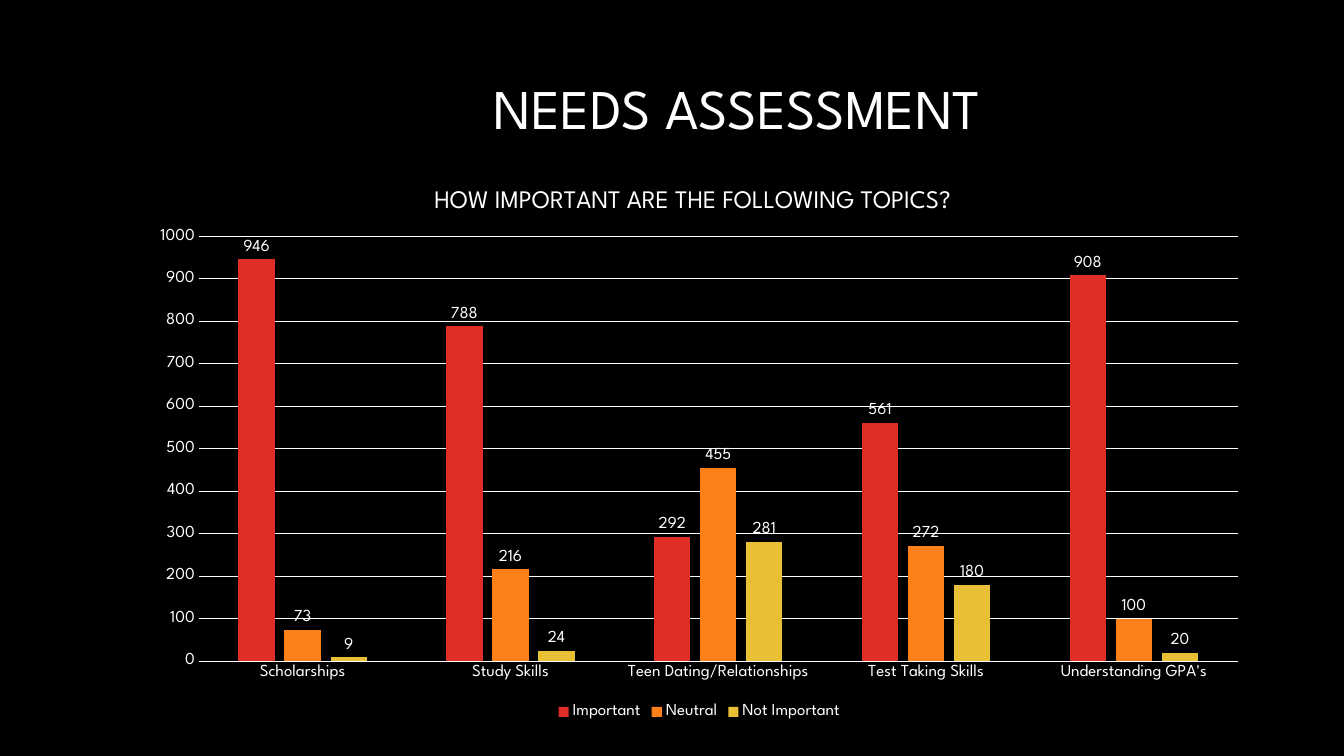
"""Build the needs assessment slide with its clustered column chart."""
from dataclasses import dataclass

import lxml.etree
import pptx
import pptx.chart.data
import pptx.dml.color
import pptx.enum.chart
import pptx.enum.text
import pptx.oxml.ns
import pptx.util

FONT = "League Spartan"
WHITE = "FFFFFF"
CATEGORIES = [
    "Scholarships",
    "Study Skills",
    "Teen Dating/Relationships",
    "Test Taking Skills",
    "Understanding GPA's",
]


@dataclass(frozen=True)
class Rating:
    name: str
    color: str
    votes: tuple[int, ...]


RATINGS = [
    Rating("Important", "DF2E28", (946, 788, 292, 561, 908)),
    Rating("Neutral", "FE801A", (73, 216, 455, 272, 100)),
    Rating("Not Important", "E9BF35", (9, 24, 281, 180, 20)),
]


def rgb(color: str) -> pptx.dml.color.RGBColor:
    return pptx.dml.color.RGBColor.from_string(color)


def inches(*lengths: float) -> list[pptx.util.Length]:
    return [pptx.util.Inches(length) for length in lengths]


def style_font(font, size: float) -> None:
    font.name = FONT
    font.size = pptx.util.Pt(size)
    font.bold = False
    font.color.rgb = rgb(WHITE)


def style_line(line) -> None:
    line.color.rgb = rgb(WHITE)
    line.width = pptx.util.Pt(0.75)


def place_chart_part(parent, index: int, **settings) -> None:
    tag = pptx.oxml.ns.qn
    for old_layout in parent.findall(tag("c:layout")):
        parent.remove(old_layout)
    layout = lxml.etree.Element(tag("c:layout"))
    manual = lxml.etree.SubElement(layout, tag("c:manualLayout"))
    for name, value in settings.items():
        lxml.etree.SubElement(manual, tag(f"c:{name}")).set("val", str(value))
    parent.insert(index, layout)


def add_title(slide) -> None:
    title = slide.shapes.title
    title.left, title.top, title.width, title.height = inches(2.6, 0.4, 9.42, 1.41)
    title.text_frame.text = "NEEDS ASSESSMENT"
    title.text_frame.vertical_anchor = pptx.enum.text.MSO_ANCHOR.MIDDLE
    paragraph = title.text_frame.paragraphs[0]
    paragraph.alignment = pptx.enum.text.PP_ALIGN.CENTER
    paragraph.line_spacing = 0.9
    style_font(paragraph.font, 40)


def style_axes(chart) -> None:
    for axis in (chart.category_axis, chart.value_axis):
        axis.major_tick_mark = pptx.enum.chart.XL_TICK_MARK.NONE
        axis.minor_tick_mark = pptx.enum.chart.XL_TICK_MARK.NONE
        style_font(axis.tick_labels.font, 12)
    style_line(chart.category_axis.format.line)
    value_axis = chart.value_axis
    value_axis.format.line.fill.background()
    value_axis.minimum_scale, value_axis.maximum_scale = 0, 1000
    value_axis.major_unit = 100
    value_axis.has_major_gridlines = True
    style_line(value_axis.major_gridlines.format.line)


def style_series(series, rating: Rating) -> None:
    series.format.fill.solid()
    series.format.fill.fore_color.rgb = rgb(rating.color)
    series.invert_if_negative = False
    labels = series.data_labels
    labels.show_value = True
    labels.position = pptx.enum.chart.XL_LABEL_POSITION.OUTSIDE_END
    style_font(labels.font, 12)


def add_ratings_chart(slide) -> None:
    data = pptx.chart.data.CategoryChartData()
    data.categories = CATEGORIES
    for rating in RATINGS:
        data.add_series(rating.name, rating.votes)
    chart = slide.shapes.add_chart(
        pptx.enum.chart.XL_CHART_TYPE.COLUMN_CLUSTERED,
        *inches(1.37, 1.59, 11.13, 5.59),
        data,
    ).chart
    style_font(chart.font, 10)

    chart.has_title = True
    heading = chart.chart_title.text_frame
    heading.text = "HOW IMPORTANT ARE THE FOLLOWING TOPICS?"
    style_font(heading.paragraphs[0].font, 18)
    chart.chart_title.include_in_layout = False

    chart.has_legend = True
    chart.legend.position = pptx.enum.chart.XL_LEGEND_POSITION.BOTTOM
    chart.legend.include_in_layout = False
    style_font(chart.legend.font, 12)

    style_axes(chart)
    plot = chart.plots[0]
    plot.gap_width, plot.overlap = 219, -27
    plot.vary_by_categories = False
    for series, rating in zip(plot.series, RATINGS):
        style_series(series, rating)

    title_element = chart.chart_title._element
    place_chart_part(title_element, 1, xMode="edge", yMode="edge", x=0.26, y=0.04)
    plot_area = title_element.getparent().find(pptx.oxml.ns.qn("c:plotArea"))
    place_chart_part(
        plot_area, 0, layoutTarget="inner", xMode="edge", yMode="edge",
        x=0.054, y=0.135, w=0.926, h=0.754,
    )


def main() -> None:
    presentation = pptx.Presentation()
    presentation.slide_width, presentation.slide_height = inches(13.33, 7.5)
    slide = presentation.slides.add_slide(presentation.slide_layouts[5])
    slide.background.fill.solid()
    slide.background.fill.fore_color.rgb = rgb("000000")
    add_title(slide)
    add_ratings_chart(slide)
    presentation.save("out.pptx")


if __name__ == "__main__":
    main()
